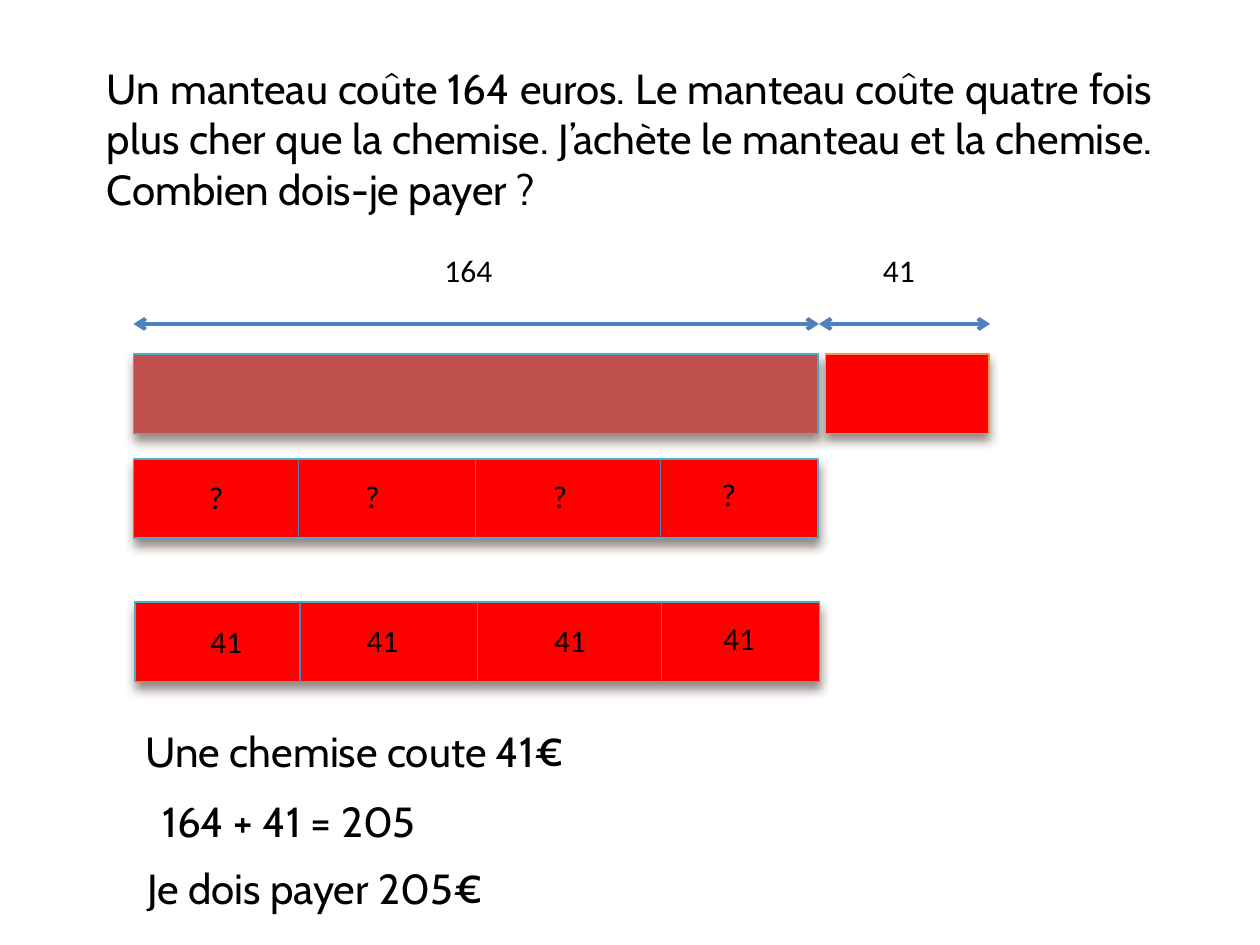
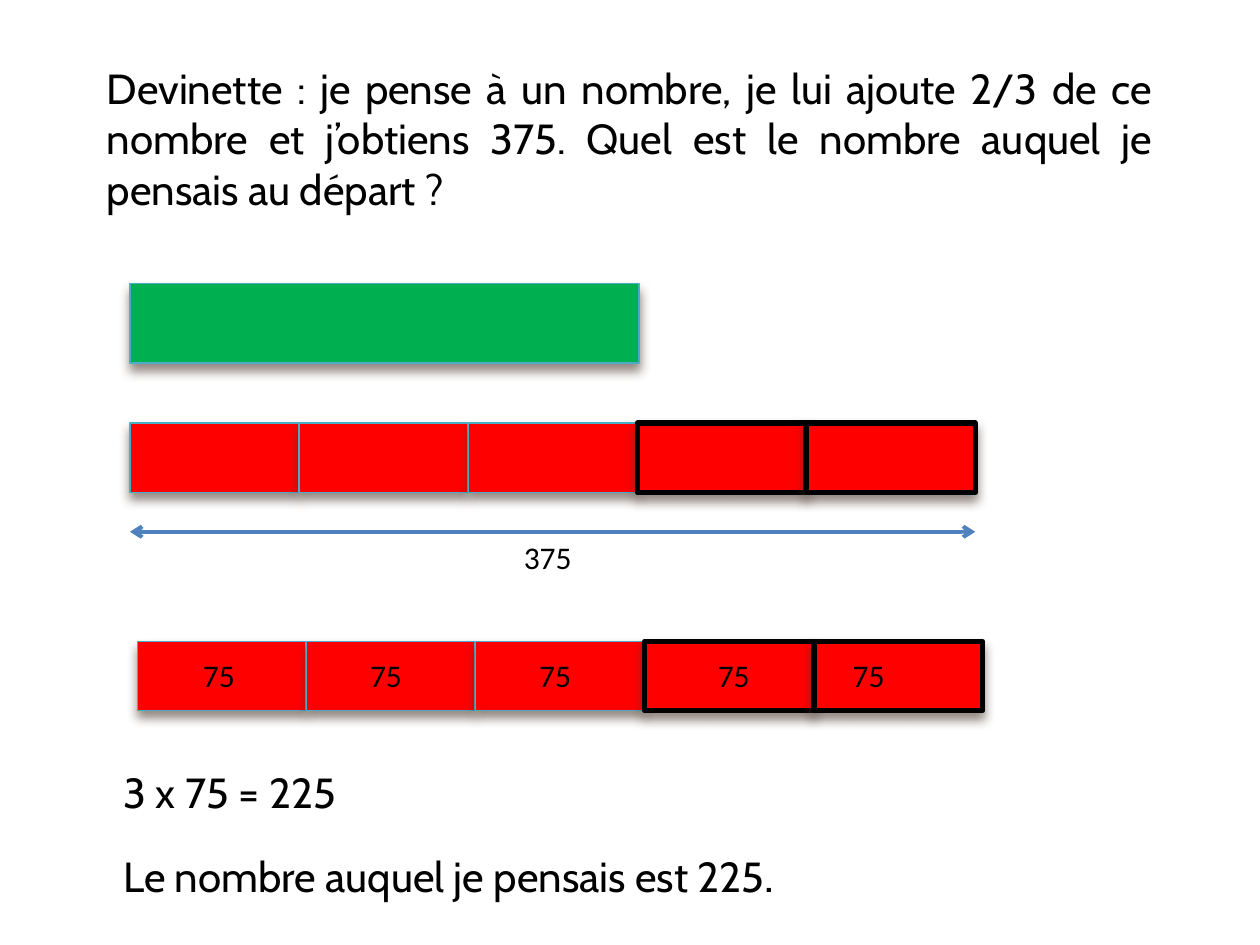
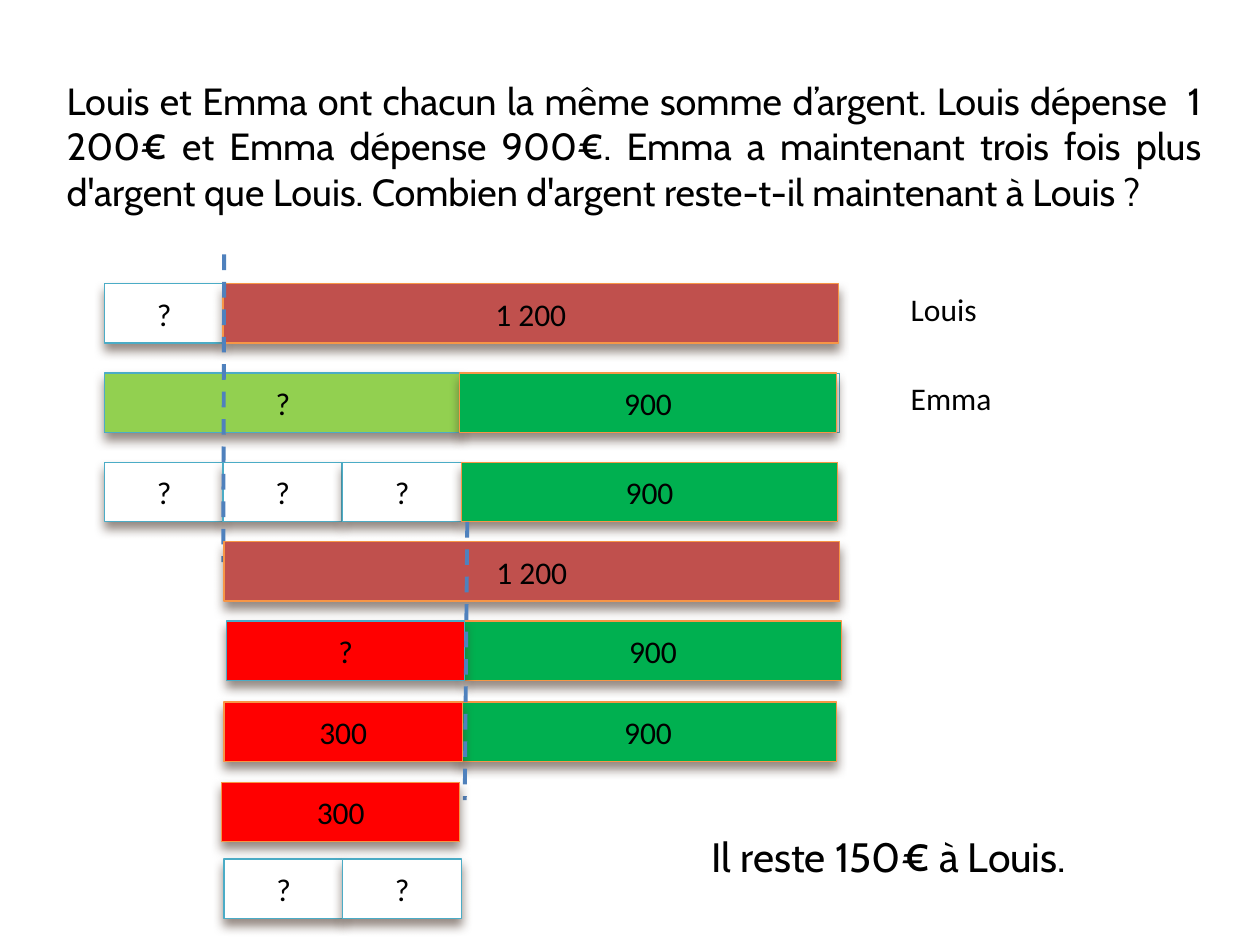
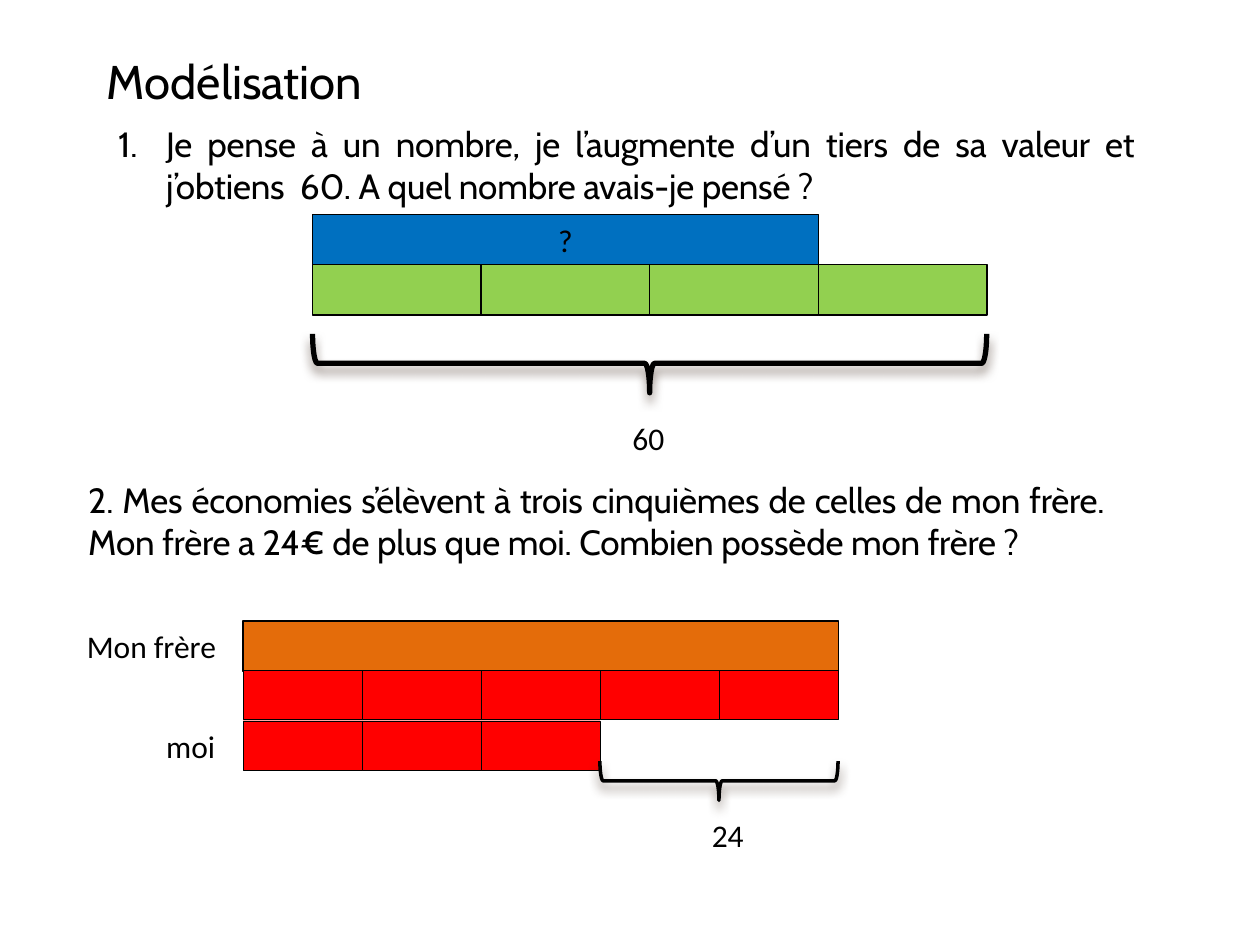
from pptx import Presentation
from pptx.dml.color import RGBColor
from pptx.enum.dml import MSO_LINE
from pptx.enum.shapes import MSO_CONNECTOR, MSO_SHAPE
from pptx.enum.text import MSO_ANCHOR, MSO_AUTO_SIZE, PP_ALIGN
from pptx.oxml.ns import qn
from pptx.util import Cm, Pt
from lxml import etree

RECTANGLE = MSO_SHAPE.RECTANGLE
RIGHT_BRACE, LEFT_BRACE = MSO_SHAPE.RIGHT_BRACE, MSO_SHAPE.LEFT_BRACE
STRAIGHT = MSO_CONNECTOR.STRAIGHT
DASH = MSO_LINE.DASH
MIDDLE, TOP = MSO_ANCHOR.MIDDLE, MSO_ANCHOR.TOP
FIT_SHAPE, NO_FIT = MSO_AUTO_SIZE.SHAPE_TO_FIT_TEXT, MSO_AUTO_SIZE.NONE
LEFT, CENTER, JUSTIFY = PP_ALIGN.LEFT, PP_ALIGN.CENTER, PP_ALIGN.JUSTIFY
BLACK, WHITE, RED, GREEN = "000000", "FFFFFF", "FF0000", "00B050"
BRICK, LIME, BLUE, RUST = "C0504D", "92D050", "0070C0", "E46C0A"
TEAL, ORANGE, STEEL, SHADE = "4BACC6", "F79646", "4F81BD", "4E3B30"
HEADING_FONT, LABEL_FONT = "Cabin", "Calibri"
TITLE_ONLY = 5
TEXT_LEFT, TEXT_WIDTH = 1.9, 21.59
LABEL_HEIGHT = 1.02
THIN = 0.79


def rgb(value):
    return RGBColor.from_string(value)


def box(left, top, width, height):
    return Cm(left), Cm(top), Cm(width), Cm(height)


def add_run(paragraph, text, size, font):
    run = paragraph.add_run()
    run.text = text
    run.font.size = Pt(size)
    run.font.name = font
    run.font.color.rgb = rgb(BLACK)
    return run


def add_shadow(shape):
    effects = shape._element.spPr.find(qn("a:effectLst"))
    outer = etree.SubElement(effects, qn("a:outerShdw"), blurRad=str(Pt(6)), dist=str(Pt(4)),
                             dir="5400000", rotWithShape="0")
    colour = etree.SubElement(outer, qn("a:srgbClr"), val=SHADE)
    etree.SubElement(colour, qn("a:alpha"), val="60000")


def add_slide(deck, title, size, top=0.74, height=4.09, left=TEXT_LEFT, width=TEXT_WIDTH):
    slide = deck.slides.add_slide(deck.slide_layouts[TITLE_ONLY])
    heading = slide.shapes.title
    heading.left, heading.top, heading.width, heading.height = box(left, top, width, height)
    frame = heading.text_frame
    frame.auto_size = NO_FIT
    frame.vertical_anchor = MIDDLE
    frame.paragraphs[0].alignment = JUSTIFY
    add_run(frame.paragraphs[0], title, size, HEADING_FONT)
    return slide.shapes


def add_bar(shapes, left, top, width, height, fill, edge, weight=THIN, text="", shadow=True):
    bar = shapes.add_shape(RECTANGLE, *box(left, top, width, height))
    bar.fill.solid()
    bar.fill.fore_color.rgb = rgb(fill)
    bar.line.color.rgb = rgb(edge)
    bar.line.width = Pt(weight)
    bar.shadow.inherit = False
    if shadow:
        add_shadow(bar)
    if text:
        bar.text_frame.vertical_anchor = MIDDLE
        paragraph = bar.text_frame.paragraphs[0]
        paragraph.alignment = CENTER
        add_run(paragraph, text, 18, LABEL_FONT)
    return bar


def add_parts(shapes, count, left, top, width, height, fill, edge, weight, shadow=True, pitch=None):
    for index in range(count):
        add_bar(shapes, left + index * (pitch or width), top, width, height, fill, edge,
                weight, shadow=shadow)


def add_brace(shapes, kind, place, rotation, weight):
    brace = shapes.add_shape(kind, *box(*place))
    brace.rotation = rotation
    brace.fill.background()
    brace.line.color.rgb = rgb(BLACK)
    brace.line.width = Pt(weight)
    brace.shadow.inherit = False
    add_shadow(brace)


def add_line(shapes, start, end, weight=2.25, arrows=False, dash=None):
    line = shapes.add_connector(STRAIGHT, *box(*start, *end))
    line.line.color.rgb = rgb(STEEL)
    line.line.width = Pt(weight)
    if dash:
        line.line.dash_style = dash
    if arrows:
        for tip in ("a:headEnd", "a:tailEnd"):
            etree.SubElement(line.line._ln, qn(tip), type="arrow")
    etree.SubElement(line._element.spPr, qn("a:effectLst"))
    return line


def add_text(shapes, place, runs, font, align, anchor=TOP, wrap=True, fit=FIT_SHAPE):
    note = shapes.add_textbox(*box(*place))
    frame = note.text_frame
    frame.word_wrap = wrap
    frame.auto_size = fit
    frame.vertical_anchor = anchor
    paragraph = frame.paragraphs[0]
    paragraph.alignment = align
    for text, size in runs:
        add_run(paragraph, text, size, font)
    return note


def add_label(shapes, text, left, top, width, fill=None, wrap=True):
    label = add_text(shapes, (left, top, width, LABEL_HEIGHT), [(text, 18)],
                     LABEL_FONT, LEFT, wrap=wrap)
    if fill:
        label.fill.solid()
        label.fill.fore_color.rgb = rgb(fill)


def add_answer(shapes, left, top, width, height, *runs):
    add_text(shapes, (left, top, width, height), runs, HEADING_FONT, JUSTIFY, MIDDLE, fit=NO_FIT)


def add_statement(shapes, text, left, top, height, indent, hanging=0, numbered=False):
    statement = add_text(shapes, (left, top, 21.01, height), [(text, 20)], HEADING_FONT, JUSTIFY)
    paragraph = statement.text_frame.paragraphs[0]
    paragraph.space_before = Pt(1)
    paragraph.runs[0].font._element.set("spc", "-10")
    properties = paragraph._p.get_or_add_pPr()
    properties.set("marL", str(Cm(indent)))
    properties.set("indent", str(Cm(-hanging)))
    if numbered:
        etree.SubElement(properties, qn("a:buFont"), typeface=HEADING_FONT)
        etree.SubElement(properties, qn("a:buAutoNum"), type="arabicPeriod")


def add_quarters(shapes, left, top, text, label_width, fill=None):
    group = shapes.add_group_shape().shapes
    width, height = 13.8, 1.6
    bar = add_bar(group, left, top, width, height, RED, TEAL)
    for offset in (6.9, 3.33, 10.62):
        x = left + offset
        divider = add_line(group, (x, top), (x, top + height), THIN)
        if offset == width / 2:
            divider.begin_connect(bar, 0)
            divider.end_connect(bar, 2)
    for offset, drop in ((1.27, 0.27), (4.42, 0.25), (8.2, 0.25), (11.61, 0.21)):
        add_label(group, text, left + offset, top + drop, label_width, fill)


def add_fifths(shapes, left, top):
    pitch, width, height = 3.41, 3.4, 1.4
    for first, count, edge, weight in ((0, 3, TEAL, THIN), (3, 2, BLACK, 3)):
        group = shapes.add_group_shape().shapes
        add_parts(group, count, left + first * pitch, top, width, height, RED, edge, weight,
                  pitch=pitch)


def coat_slide(deck):
    shapes = add_slide(deck, "Un manteau coûte 164 euros. Le manteau coûte quatre fois plus cher "
                       "que la chemise. J’achète le manteau et la chemise. "
                       "Combien dois-je payer ?", 24)
    add_line(shapes, (2.69, 6.53), (16.51, 6.53), arrows=True)
    add_label(shapes, "164", 8.71, 4.93, 2.21)
    add_bar(shapes, 2.69, 7.14, 13.8, 1.6, BRICK, TEAL)
    add_quarters(shapes, 2.69, 9.25, "?", 0.97, RED)
    add_quarters(shapes, 2.72, 12.14, "41", 1.52)
    add_bar(shapes, 16.64, 7.14, 3.3, 1.6, RED, ORANGE)
    add_line(shapes, (16.51, 6.53), (19.96, 6.53), arrows=True)
    add_label(shapes, "41", 17.55, 4.93, 1.8)
    for left, top, text in ((2.69, 14.12, "Une chemise coute 41€"),
                            (3.02, 15.52, "164 + 41 = 205"),
                            (2.72, 16.89, "Je dois payer 205€")):
        add_answer(shapes, left, top, TEXT_WIDTH, 2.03, (text, 24))


def riddle_slide(deck):
    shapes = add_slide(deck, "Devinette : je pense à un nombre, je lui ajoute 2/3 de ce nombre et "
                       "j’obtiens 375. Quel est le nombre auquel je pensais au départ ?", 24)
    add_fifths(shapes, 2.62, 8.53)
    add_bar(shapes, 2.62, 5.72, 10.26, 1.6, GREEN, TEAL)
    add_line(shapes, (2.62, 10.72), (19.66, 10.72), arrows=True)
    add_label(shapes, "375", 10.31, 10.72, 3.61)
    add_fifths(shapes, 2.77, 12.93)
    for left in (3.84, 7.21, 10.62, 14.22, 16.94):
        add_label(shapes, "75", left, 13.11, 2.03, RED)
    add_answer(shapes, 2.24, 15.42, TEXT_WIDTH, 1.09, ("3 x 75 = 225", 24))
    add_answer(shapes, 2.24, 16.51, TEXT_WIDTH, 2.21,
               ("Le nombre auquel je pensais est 225", 24), (".", 27))


def spending_slide(deck):
    shapes = add_slide(deck, "Louis et Emma ont chacun la même somme d’argent. Louis dépense  "
                       "1 200€ et Emma dépense 900€. Emma a maintenant trois fois plus d'argent "
                       "que Louis. Combien d'argent reste-t-il maintenant à Louis ?",
                       21.6, height=4.39, left=1.09, width=23.39)
    unit, height, louis_spent, emma_spent, difference = 2.4, 1.2, 12.4, 7.59, 4.8
    add_bar(shapes, 2.11, 7.52, 14.81, height, WHITE, TEAL, 0.25, shadow=False)
    shares = [
        (2.11, 5.72, unit, "?", WHITE, TEAL),
        (4.5, 5.72, louis_spent, "1 200", BRICK, ORANGE),
        (2.11, 9.32, unit, "?", WHITE, TEAL),
        (4.5, 9.32, unit, "?", WHITE, TEAL),
        (6.91, 9.32, unit, "?", WHITE, TEAL),
        (9.3, 9.32, emma_spent, "900", GREEN, ORANGE),
        (9.37, 12.52, emma_spent, "900", GREEN, ORANGE),
        (4.57, 12.52, difference, "?", RED, TEAL),
        (2.11, 7.52, 7.19, "?", LIME, TEAL),
        (9.27, 7.52, emma_spent, "900", GREEN, ORANGE),
    ]
    solution = [
        (4.52, 10.92, louis_spent, "1 200", BRICK, ORANGE),
        (9.27, 14.15, emma_spent, "900", GREEN, ORANGE),
        (4.52, 14.15, difference, "300", RED, ORANGE),
    ]
    remainder = [
        (4.52, 17.32, unit, "?", WHITE, TEAL),
        (6.91, 17.32, unit, "?", WHITE, TEAL),
        (4.47, 15.77, difference, "300", RED, ORANGE),
    ]

    def add_bars(bars):
        for left, top, width, text, fill, edge in bars:
            add_bar(shapes, left, top, width, height, fill, edge, text=text)

    add_bars(shares)
    add_line(shapes, (4.52, 5.13), (4.5, 11.33), dash=DASH)
    add_label(shapes, "Louis", 18.11, 5.72, 4.39)
    add_label(shapes, "Emma", 18.11, 7.52, 4.39)
    add_bars(solution)
    add_line(shapes, (9.42, 10.52), (9.37, 16.13), dash=DASH)
    add_bars(remainder)
    add_answer(shapes, 14.1, 16.13, 10.08, 2.26, ("Il reste 150€ à Louis.", 23.4))


def modelling_slide(deck):
    shapes = add_slide(deck, "Modélisation", 27, top=0.33, height=2.59)
    add_statement(shapes, "Je pense à un nombre, je l’augmente d’un tiers de sa valeur et "
                  "j’obtiens  60. A quel nombre avais-je pensé ?", 2.11, 2.34, 1.96,
                  0.99, 0.97, numbered=True)
    add_statement(shapes, "2. Mes économies s’élèvent à trois cinquièmes de celles de mon frère. "
                  "Mon frère a 24€ de plus que moi. Combien possède mon frère ?",
                  1.5, 9.53, 2.82, 0.03)
    third, fifth = 3.4, 2.4
    add_bar(shapes, 6.3, 4.32, 3 * third, 1.02, BLUE, BLACK, 0.75, "?", shadow=False)
    add_parts(shapes, 4, 6.3, 5.33, third, 1.02, LIME, BLACK, 0.75, shadow=False)
    add_brace(shapes, RIGHT_BRACE, (12.5, 0.53, 1.19, 13.59), 90, 3)
    add_label(shapes, "60", 12.5, 8.33, 3.81)
    add_bar(shapes, 4.9, 12.52, 5 * fifth, 1.02, RUST, BLACK, 0.75, shadow=False)
    add_label(shapes, "Mon frère", 1.5, 12.52, 3.15, wrap=False)
    for count, top in ((5, 13.51), (3, 14.53)):
        add_parts(shapes, count, 4.9, top, fifth, 1, RED, BLACK, 0.25, shadow=False)
    add_label(shapes, "moi", 3.1, 14.53, 1.5, wrap=False)
    add_brace(shapes, LEFT_BRACE, (14.1, 13.34, 0.79, 4.8), 270, 2)
    add_label(shapes, "24", 14.1, 16.33, 1.17, wrap=False)


def main():
    deck = Presentation()
    deck.slide_width, deck.slide_height = Cm(25.4), Cm(19.05)
    coat_slide(deck)
    riddle_slide(deck)
    spending_slide(deck)
    modelling_slide(deck)
    deck.save("out.pptx")


if __name__ == "__main__":
    main()
